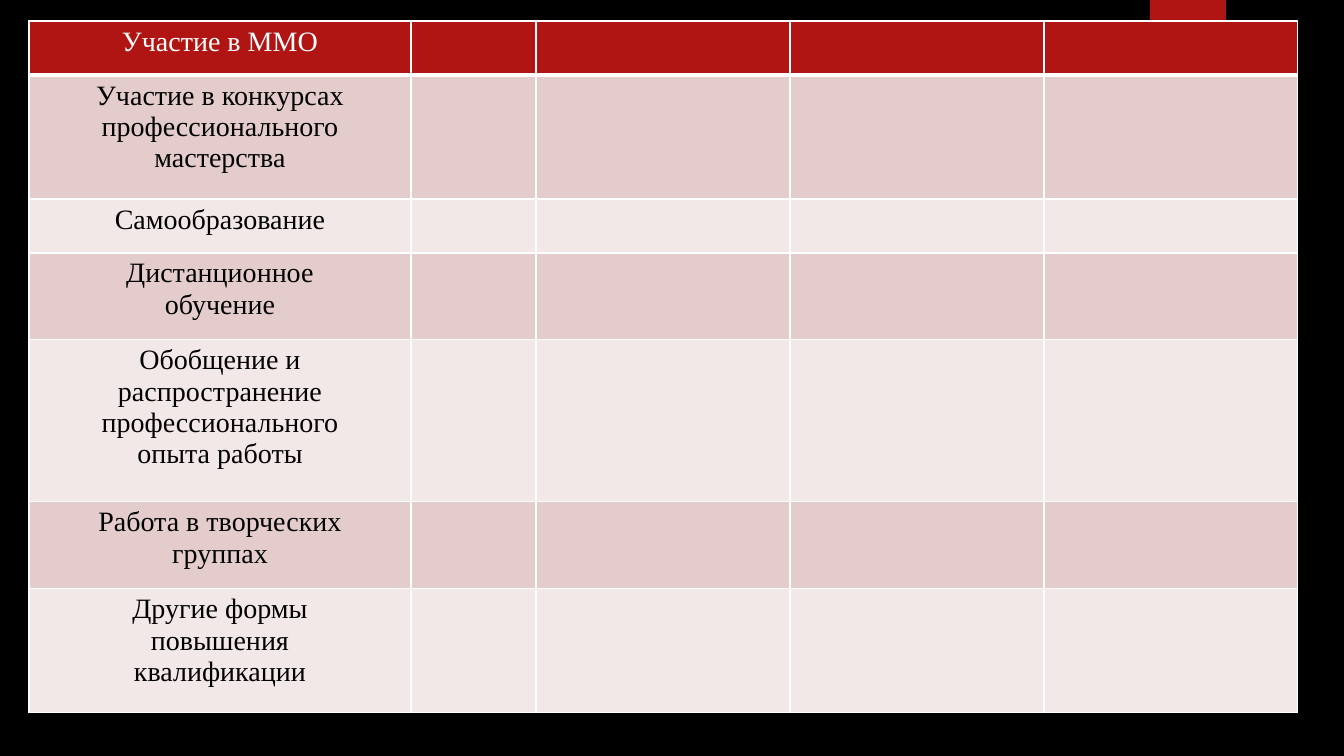
from dataclasses import dataclass

from lxml.etree import SubElement
from pptx import Presentation
from pptx.dml.color import RGBColor
from pptx.enum.shapes import MSO_SHAPE as Preset
from pptx.enum.text import PP_ALIGN as Align
from pptx.oxml.ns import qn
from pptx.util import Emu, Pt

ROWS = [
    (54, ["Участие в ММО"]),
    (124, ["Участие в конкурсах", "профессионального", "мастерства"]),
    (54, ["Самообразование"]),
    (87, ["Дистанционное", "обучение"]),
    (162, ["Обобщение и", "распространение", "профессионального", "опыта работы"]),
    (87, ["Работа в творческих", "группах"]),
    (124, ["Другие формы", "повышения", "квалификации"]),
]
COLUMN_WIDTHS = [382, 125, 254, 254, 254]
TABLE_LEFT, TABLE_TOP = 29, 21
SLIDE_SIZE = (1344, 756)
RIBBON = (1150, 0, 76, 126)


@dataclass(frozen=True)
class Theme:
    background: str = "000000"
    accent: str = "B01513"
    bands: tuple = ("F2E8E7", "E4CCCC")
    border: str = "FFFFFF"
    header_text: str = "FFFFFF"
    body_text: str = "000000"
    font: str = "Times New Roman"
    text_size: int = 20
    border_width: int = 1
    header_rule_width: int = 3


THEME = Theme()


def px(value):
    return Emu(round(value * 914400 / 100.8))


def paint(fill, color):
    fill.solid()
    fill.fore_color.rgb = RGBColor.from_string(color)


def add_borders(cell, row_index):
    properties = cell._tc.get_or_add_tcPr()
    for side in ("L", "R", "T", "B"):
        under_header = (row_index, side) in ((0, "B"), (1, "T"))
        width = THEME.header_rule_width if under_header else THEME.border_width
        line = SubElement(properties, qn(f"a:ln{side}"), w=str(Pt(width)))
        solid = SubElement(line, qn("a:solidFill"))
        SubElement(solid, qn("a:srgbClr"), val=THEME.border)


def write_label(cell, lines, color):
    cell.text_frame.text = "\n".join(lines)
    for paragraph in cell.text_frame.paragraphs:
        paragraph.alignment = Align.CENTER
        for run in paragraph.runs:
            run.font.name = THEME.font
            run.font.size = Pt(THEME.text_size)
            run.font.bold = False
            run.font.color.rgb = RGBColor.from_string(color)


def add_ribbon(slide):
    shape = slide.shapes.add_shape(Preset.RECTANGLE, *map(px, RIBBON))
    shape.shadow.inherit = False
    paint(shape.fill, THEME.accent)
    shape.line.fill.background()


def add_activity_table(slide):
    width = sum(COLUMN_WIDTHS)
    height = sum(row_height for row_height, _ in ROWS)
    bounds = map(px, (TABLE_LEFT, TABLE_TOP, width, height))
    table = slide.shapes.add_table(len(ROWS), len(COLUMN_WIDTHS), *bounds).table
    table.horz_banding = False
    for column, column_width in zip(table.columns, COLUMN_WIDTHS):
        column.width = px(column_width)
    for row_index, (row_height, lines) in enumerate(ROWS):
        row = table.rows[row_index]
        row.height = px(row_height)
        is_header = row_index == 0
        fill_color = THEME.accent if is_header else THEME.bands[row_index % 2]
        for cell in row.cells:
            add_borders(cell, row_index)
            paint(cell.fill, fill_color)
        text_color = THEME.header_text if is_header else THEME.body_text
        write_label(row.cells[0], lines, text_color)


def main():
    presentation = Presentation()
    presentation.slide_width, presentation.slide_height = map(px, SLIDE_SIZE)
    slide = presentation.slides.add_slide(presentation.slide_layouts[6])
    paint(slide.background.fill, THEME.background)
    add_ribbon(slide)
    add_activity_table(slide)
    presentation.save("out.pptx")


if __name__ == "__main__":
    main()
